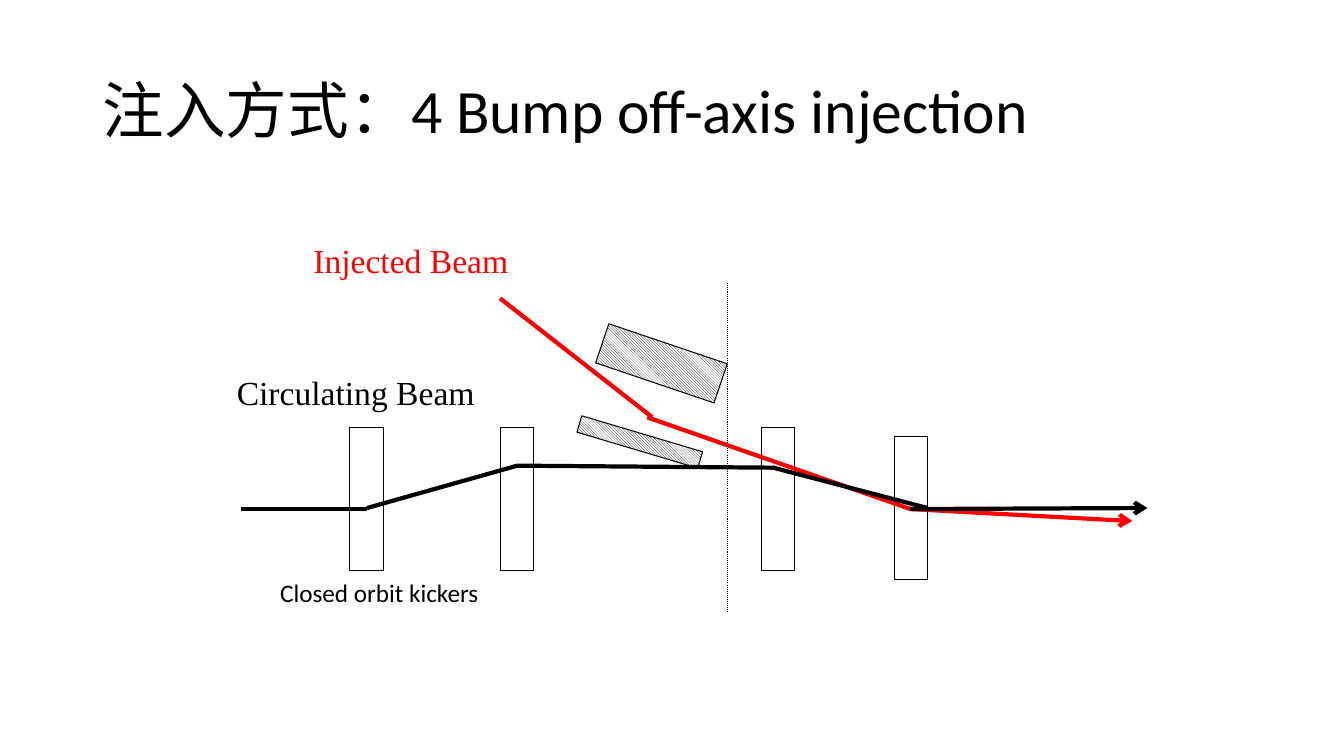
from pptx import Presentation
from pptx.dml.color import RGBColor
from pptx.enum.dml import MSO_LINE_DASH_STYLE as Dash, MSO_PATTERN_TYPE as Pattern
from pptx.enum.shapes import MSO_CONNECTOR as Connector, MSO_SHAPE as Shape
from pptx.enum.text import MSO_ANCHOR as Anchor, MSO_AUTO_SIZE as AutoSize
from pptx.oxml.ns import qn
from pptx.util import Inches, Pt
from lxml.etree import SubElement

BLACK = RGBColor(0x00, 0x00, 0x00)
WHITE = RGBColor(0xFF, 0xFF, 0xFF)
RED = RGBColor(0xFF, 0x00, 0x00)
SANS = "Calibri"
SERIF = "Times New Roman"


class InjectionSlide:
    thin = Pt(0.75)
    beam_width = Pt(3)

    def __init__(self, page):
        self.shapes = page.shapes

    def text(self, words, left, top, width, height, size, font=SANS, color=BLACK, wrap=True):
        box = self.shapes.add_textbox(Inches(left), Inches(top), Inches(width), Inches(height))
        frame = box.text_frame
        frame.text = words
        frame.word_wrap = wrap
        span = frame.paragraphs[0].runs[0]
        span.font.size = Pt(size)
        span.font.name = font
        span.font.color.rgb = color
        return frame

    def label(self, words, left, top, width, height, size, **style):
        frame = self.text(words, left, top, width, height, size, **style)
        frame.auto_size = AutoSize.SHAPE_TO_FIT_TEXT

    def title(self, words):
        frame = self.text(words, 0.92, 0.4, 11.5, 1.45, 44)
        frame.vertical_anchor = Anchor.MIDDLE
        frame.paragraphs[0].line_spacing = 0.9

    def rectangle(self, left, top, width, height):
        block = self.shapes.add_shape(
            Shape.RECTANGLE, Inches(left), Inches(top), Inches(width), Inches(height))
        block.shadow.inherit = False
        block.fill.background()
        block.line.color.rgb = BLACK
        block.line.width = self.thin
        return block

    def kicker(self, left, top=4.24):
        self.rectangle(left, top, 0.33, 1.42)

    def septum(self, left, top, width, height, angle):
        block = self.rectangle(left, top, width, height)
        block.rotation = angle
        block.fill.patterned()
        block.fill.pattern = Pattern.LIGHT_DOWNWARD_DIAGONAL
        block.fill.fore_color.rgb = BLACK
        block.fill.back_color.rgb = WHITE

    def line(self, start, end, color=BLACK, width=beam_width, arrow=False, dash=None):
        link = self.shapes.add_connector(
            Connector.STRAIGHT, *(Inches(value) for value in start + end))
        link.line.color.rgb = color
        link.line.width = width
        if dash:
            link.line.dash_style = dash
        properties = link._element.spPr
        if arrow:
            SubElement(properties.find(qn("a:ln")), qn("a:tailEnd"), type="arrow")
        SubElement(properties, qn("a:effectLst"))


def main():
    deck = Presentation()
    deck.slide_width, deck.slide_height = Inches(13.33), Inches(7.5)
    slide = InjectionSlide(deck.slides.add_slide(deck.slide_layouts[6]))

    slide.title("注入方式：4 Bump off-axis injection")

    # Septum magnet
    slide.septum(5.72, 4.3, 1.25, 0.17, 16.6)
    slide.septum(5.94, 3.4, 1.24, 0.41, 18.7)

    # Four kickers, the last one slightly lower
    for left in (3.47, 4.96, 7.55):
        slide.kicker(left)
    slide.kicker(8.87, 4.33)

    # Injected beam
    slide.line((4.96, 2.96), (6.47, 4.14), RED)
    slide.line((6.42, 4.14), (9.03, 5.05), RED)
    slide.line((9.03, 5.05), (11.23, 5.17), RED, arrow=True)

    # Circulating beam
    slide.line((2.39, 5.05), (3.64, 5.05))
    slide.line((3.64, 5.04), (5.13, 4.62))
    slide.line((5.13, 4.62), (7.69, 4.64))
    slide.line((7.67, 4.64), (9.2, 5.04))
    slide.line((9.03, 5.05), (11.38, 5.04), arrow=True)

    # Injection point
    slide.line((7.22, 2.81), (7.22, 6.08), width=slide.thin, dash=Dash.ROUND_DOT)

    # Labels
    slide.label("Closed orbit kickers", 2.68, 5.68, 2.21, 0.4, 18, wrap=False)
    slide.label("Injected Beam", 3.01, 2.33, 2.71, 0.5, 24, font=SERIF, color=RED)
    slide.label("Circulating Beam", 2.25, 3.64, 2.71, 0.5, 24, font=SERIF)

    deck.save("out.pptx")


if __name__ == "__main__":
    main()
